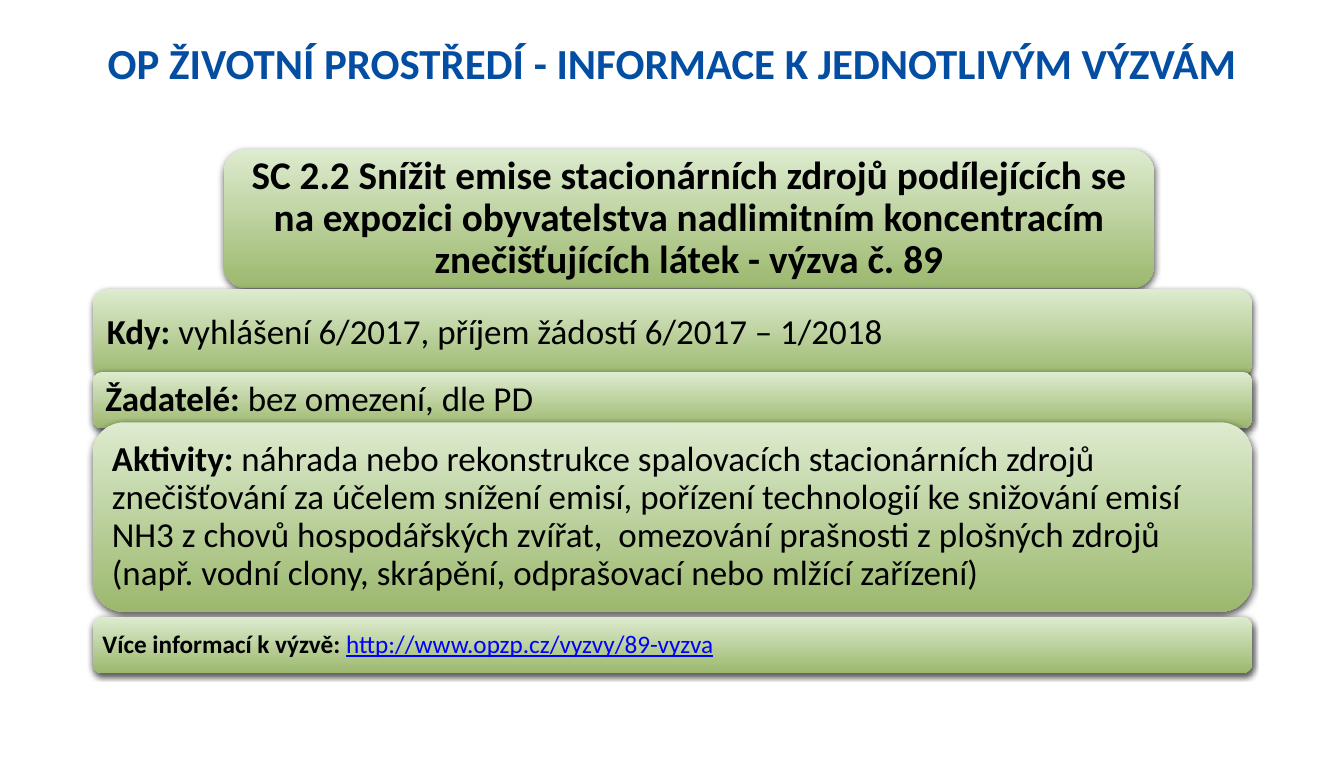
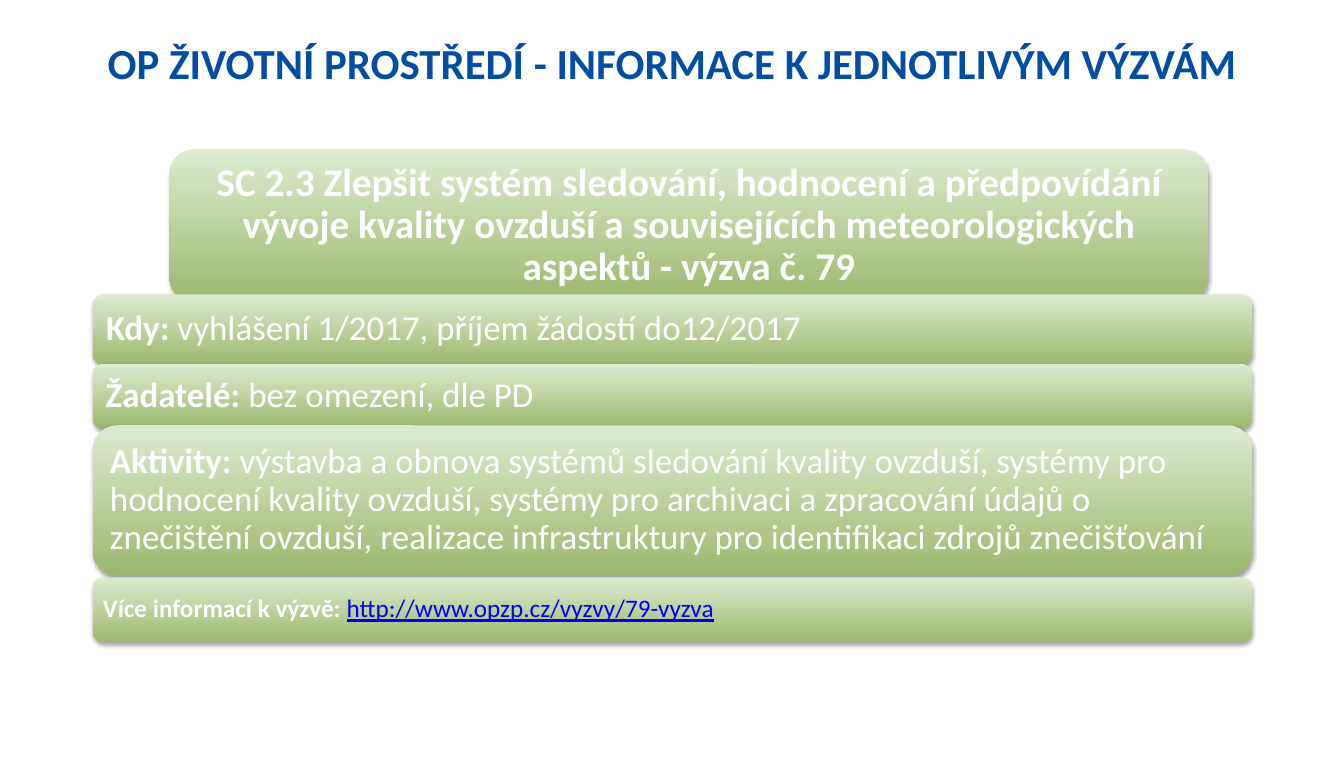
from lxml import etree
from pptx import Presentation
from pptx import util as u
from pptx.dml.color import RGBColor
from pptx.enum import shapes, text
from pptx.oxml.ns import qn

INK = {"title": "034EA2", "top": "DDEBCF", "base": "9CB86E",
       "dark": "000000", "light": "FFFFFF", "link": "0000FF"}
FACE = "Calibri"
TITLE = "OP ŽIVOTNÍ PROSTŘEDÍ - INFORMACE K JEDNOTLIVÝM VÝZVÁM"
SIDES = ("margin_left", "margin_top", "margin_right", "margin_bottom")
MID = 51.25  # centre of the heading bar, percent of slide width
LEFT, WIDE = 6.9, 86.26  # the other bars, percent of slide width

CALLS = [
    {"ink": "dark", "shade": {"alpha": 63, "blur": 4.5, "dist": 1.5},
     "wide": 69.24,
     "rows": [(19.27, 17.97), (37.37, 11.46), (48.05, 7.29),
              (54.56, 24.48), (79.69, 7.29)],
     "head": "SC 2.2 Snížit emise stacionárních zdrojů podílejících se na "
             "expozici obyvatelstva nadlimitním koncentracím "
             "znečišťujících látek - výzva č. 89",
     "when": "vyhlášení 6/2017, příjem žádostí 6/2017 – 1/2018",
     "work": "náhrada nebo rekonstrukce spalovacích stacionárních zdrojů "
             "znečišťování za účelem snížení emisí, pořízení technologií ke "
             "snižování emisí NH3 z chovů hospodářských zvířat,  omezování "
             "prašnosti z plošných zdrojů (např. vodní clony, skrápění, "
             "odprašovací nebo mlžící zařízení)",
     "link": "http://www.opzp.cz/vyzvy/89-vyzva"},
    {"ink": "light", "shade": {"alpha": 35, "blur": 3.1, "dist": 1.8},
     "wide": 77.27,
     "rows": [(19.27, 19.79), (38.02, 9.11), (47.01, 8.33),
              (54.95, 19.4), (74.61, 8.33)],
     "head": "SC 2.3 Zlepšit systém sledování, hodnocení a předpovídání "
             "vývoje kvality ovzduší a souvisejících meteorologických "
             "aspektů - výzva č. 79",
     "when": "vyhlášení 1/2017, příjem žádostí do12/2017",
     "work": "výstavba a obnova systémů sledování kvality ovzduší, systémy "
             "pro hodnocení kvality ovzduší, systémy pro archivaci a "
             "zpracování údajů o znečištění ovzduší, realizace "
             "infrastruktury pro identifikaci zdrojů znečišťování",
     "link": "http://www.opzp.cz/vyzvy/79-vyzva"},
]


def put(item, **props):
    for name, value in props.items():
        setattr(item, name, value)


class Deck:
    def __init__(self):
        self.prs = Presentation()
        put(self.prs, slide_width=u.Inches(13.33),
            slide_height=u.Inches(7.68))

    def box(self, left, top, wide, high):
        """Turn percentages of the slide into a place and size."""
        w, h = self.prs.slide_width, self.prs.slide_height
        return {"left": int(w * left / 100), "top": int(h * top / 100),
                "width": int(w * wide / 100), "height": int(h * high / 100)}

    def start(self, title):
        self.slide = self.prs.slides.add_slide(self.prs.slide_layouts[5])
        head = self.slide.shapes.title
        put(head, **self.box(5, 4.04, 90, 13.15))
        put(head.text_frame, vertical_anchor=text.MSO_ANCHOR.TOP,
            auto_size=text.MSO_AUTO_SIZE.NONE, word_wrap=True)
        para = head.text_frame.paragraphs[0]
        para.alignment = text.PP_ALIGN.CENTER
        self.run(para, title, 30.6, "title", bold=True)

    def run(self, para, words, size, ink, **props):
        run = para.add_run()
        run.text = words
        put(run.font, name=FACE, size=u.Pt(size), **props)
        run.font.color.rgb = RGBColor.from_string(INK[ink])

    def shade(self, shape, alpha, blur, dist):
        shape.shadow.inherit = False
        effects = shape._element.spPr.find(qn("a:effectLst"))
        outer = etree.SubElement(
            effects, qn("a:outerShdw"), blurRad=str(u.Pt(blur)),
            dist=str(u.Pt(dist)), dir="5400000", rotWithShape="0")
        tone = etree.SubElement(outer, qn("a:srgbClr"), val=INK["dark"])
        etree.SubElement(tone, qn("a:alpha"), val=str(alpha * 1000))

    def bar(self, place, shade, runs, size, pad=0.1, align="LEFT"):
        """Draw a rounded bar; runs holds (words, ink, font values)."""
        shape = self.slide.shapes.add_shape(
            shapes.MSO_SHAPE.ROUNDED_RECTANGLE, **self.box(*place))
        shape.line.fill.background()
        shape.fill.gradient()
        shape.fill.gradient_angle = 270
        for stop, ink in zip(shape.fill.gradient_stops, ("top", "base")):
            stop.color.rgb = RGBColor.from_string(INK[ink])
        self.shade(shape, **shade)
        frame = shape.text_frame
        put(frame, word_wrap=True, vertical_anchor=text.MSO_ANCHOR.MIDDLE,
            **dict.fromkeys(SIDES, u.Inches(pad)))
        para = frame.paragraphs[0]
        put(para, alignment=getattr(text.PP_ALIGN, align), line_spacing=0.9)
        for words, ink, props in runs:
            self.run(para, words, size, ink, **props)

    def call(self, ink, shade, wide, rows, head, when, work, link):
        """Build one slide on a call for grants."""
        self.start(TITLE)
        bold, plain = {"bold": True}, {"bold": False}
        top, *rest = rows
        self.bar((MID - wide / 2, top[0], wide, top[1]), shade,
                 [(head, ink, bold)], 28, 0.12, "CENTER")
        facts = [("Kdy: ", when, ink, plain, 25, 0.1),
                 ("Žadatelé: ", "bez omezení, dle PD", ink, plain, 25, 0.1),
                 ("Aktivity: ", work, ink, plain, 25, 0.1),
                 ("Více informací k výzvě: ", link, "link",
                  {"bold": False, "underline": True}, 18, 0.07)]
        for (y, high), (label, words, tint, props, size, pad) in zip(
                rest, facts):
            self.bar((LEFT, y, WIDE, high), shade,
                     [(label, ink, bold), (words, tint, props)], size, pad)


def main():
    deck = Deck()
    for call in CALLS:
        deck.call(**call)
    deck.prs.save("out.pptx")


if __name__ == "__main__":
    main()
